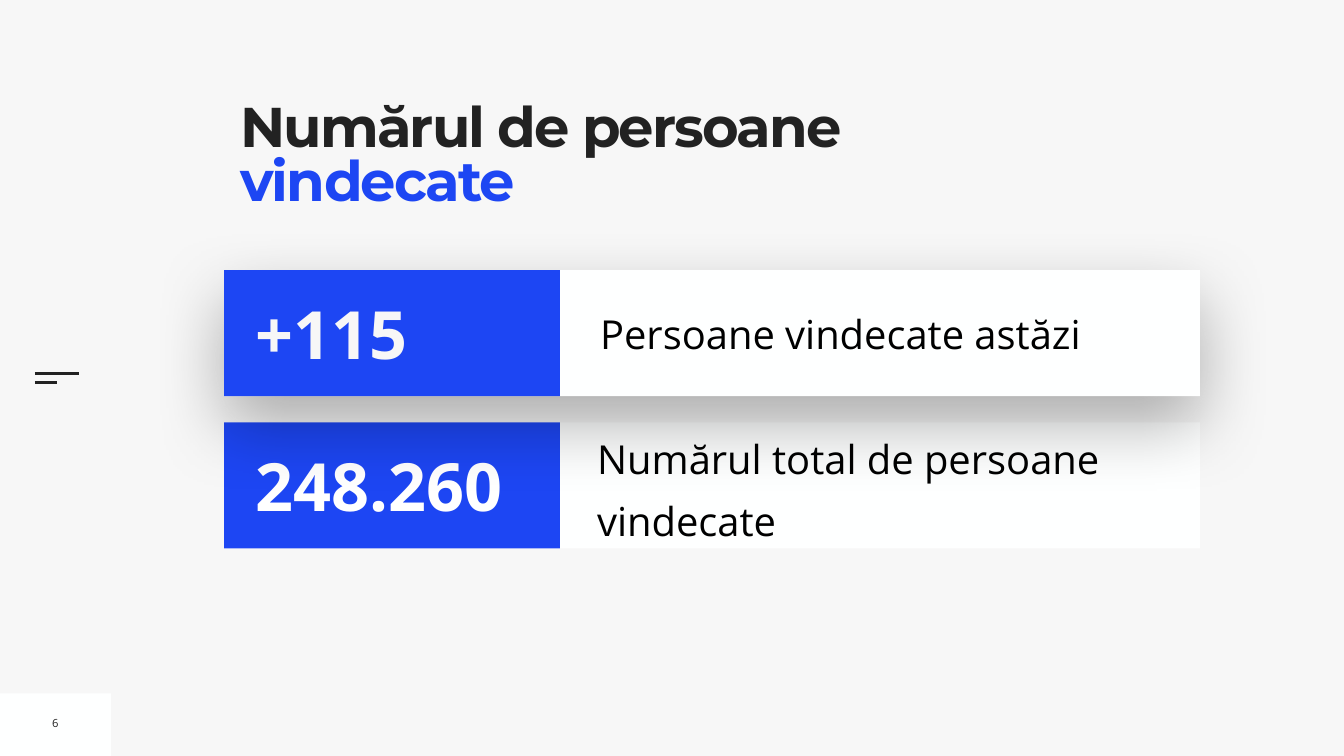
from lxml import etree
from pptx import Presentation
from pptx.dml.color import RGBColor
from pptx.enum.shapes import MSO_CONNECTOR, MSO_SHAPE
from pptx.enum.text import MSO_ANCHOR, PP_ALIGN
from pptx.oxml.ns import qn
from pptx.util import Inches, Pt

RECTANGLE = MSO_SHAPE.RECTANGLE
STRAIGHT = MSO_CONNECTOR.STRAIGHT
MIDDLE = MSO_ANCHOR.MIDDLE
CENTER = PP_ALIGN.CENTER

PAPER, WHITE, INK, BLUE = "F7F7F7", "FEFFFF", "222222", "1D46F3"
ROW_LEFT, ROW_WIDTH, ROW_HEIGHT = 4.45, 19.36, 2.5
FIGURE_WIDTH = 6.66


def color(value):
    """Turn a hex string into a colour."""
    return RGBColor.from_string(value)


def add_block(page, left, top, width, height, fill):
    """Add a plain filled rectangle."""
    block = page.shapes.add_shape(
        RECTANGLE, Inches(left), Inches(top), Inches(width), Inches(height))
    block.shadow.inherit = False
    block.fill.solid()
    block.fill.fore_color.rgb = color(fill)
    block.line.fill.background()
    return block


def add_soft_shadow(block):
    """Give a block a wide shadow that falls downwards."""
    effects = block._element.spPr.find(qn("a:effectLst"))
    shadow = etree.SubElement(
        effects, qn("a:outerShdw"), blurRad=str(Pt(100)), dist=str(Pt(40)),
        dir="5400000", rotWithShape="0")
    tone = etree.SubElement(shadow, qn("a:srgbClr"), val="000000")
    etree.SubElement(tone, qn("a:alpha"), val="30000")


def style(span, size, font, tone, bold=False):
    """Set the font of a run."""
    span.font.size = Pt(size)
    span.font.name = font
    span.font.bold = bold
    span.font.color.rgb = color(tone)


def add_text(page, left, top, width, height, text, size, tone, bold=False,
             inset=0.1, wrap=True):
    """Add one vertically centred line of text and return its paragraph."""
    box = page.shapes.add_textbox(
        Inches(left), Inches(top), Inches(width), Inches(height))
    frame = box.text_frame
    frame.word_wrap = wrap
    frame.vertical_anchor = MIDDLE
    frame.margin_left = frame.margin_right = Inches(inset)
    frame.margin_top = frame.margin_bottom = Inches(inset)
    frame.text = text
    para = frame.paragraphs[0]
    style(para.runs[0], size, "Open Sans", tone, bold)
    return para


def add_title(page, left, top, width, height):
    """Add the two-colour heading."""
    frame = add_block(page, left, top, width, height, PAPER).text_frame
    frame.word_wrap = True
    frame.vertical_anchor = MSO_ANCHOR.TOP
    frame.margin_left = frame.margin_right = 0
    frame.margin_top = frame.margin_bottom = 0
    para = frame.paragraphs[0]
    para.alignment = PP_ALIGN.LEFT
    para.line_spacing = 0.8
    for text, tone in (("Numărul de persoane ", INK), ("vindecate", BLUE)):
        span = para.add_run()
        span.text = text
        style(span, 80, "Montserrat", tone, True)
        span.font._element.set("spc", "-270")


def add_row(page, left, top, figure, figure_tone, raised=False):
    """Add a white bar with a blue figure panel."""
    bar = add_block(page, left, top, ROW_WIDTH, ROW_HEIGHT, WHITE)
    if raised:
        add_soft_shadow(bar)
    add_block(page, left, top, FIGURE_WIDTH, ROW_HEIGHT, BLUE)
    add_text(page, left + 0.53, top + 0.35, 6.03, 1.8, figure, 95,
             figure_tone, True)


def add_total_row(page, left, top):
    """Add the row with the overall count."""
    add_row(page, left, top, "248.260", "FFFFFF")
    para = add_text(page, left + 7.4, top + 0.01, 11.95, 2.36,
                    "Numărul total de persoane vindecate", 57, "000000",
                    inset=0)
    para.line_spacing = 1.3
    para.space_before = Pt(20)


def add_today_row(page, left, top):
    """Add the raised row with the count of the day."""
    add_row(page, left, top, "+115", PAPER, raised=True)
    add_text(page, left + 7.36, top + 0.67, 11.76, 1.16,
             "Persoane vindecate astăzi", 57, "000000")


def add_menu_mark(page, left, top):
    """Add the two short rules at the left edge."""
    for offset, length in ((0, 0.88), (0.18, 0.44)):
        rule = page.shapes.add_connector(
            STRAIGHT, Inches(left), Inches(top + offset),
            Inches(left + length), Inches(top + offset))
        rule.line.color.rgb = color(INK)
        rule.line.width = Pt(3)
        etree.SubElement(rule._element.spPr, qn("a:effectLst"))


def add_page_number(page, left, top, width, height):
    """Add the corner panel with the page number."""
    add_block(page, left, top, width, height, WHITE)
    para = add_text(page, left + 0.93, top + 0.33, 0.34, 0.51, "6", 16, INK,
                    wrap=False)
    para.alignment = CENTER


def main():
    """Build and save the slide."""
    deck = Presentation()
    deck.slide_width, deck.slide_height = Inches(26.67), Inches(15)
    page = deck.slides.add_slide(deck.slide_layouts[6])
    page.background.fill.solid()
    page.background.fill.fore_color.rgb = color(PAPER)
    add_page_number(page, 0, 13.76, 2.2, 1.24)
    add_menu_mark(page, 0.69, 7.41)
    add_title(page, 4.77, 2.07, 13.01, 2.73)
    add_total_row(page, ROW_LEFT, 8.38)
    add_today_row(page, ROW_LEFT, 5.36)
    deck.save("out.pptx")


if __name__ == "__main__":
    main()
